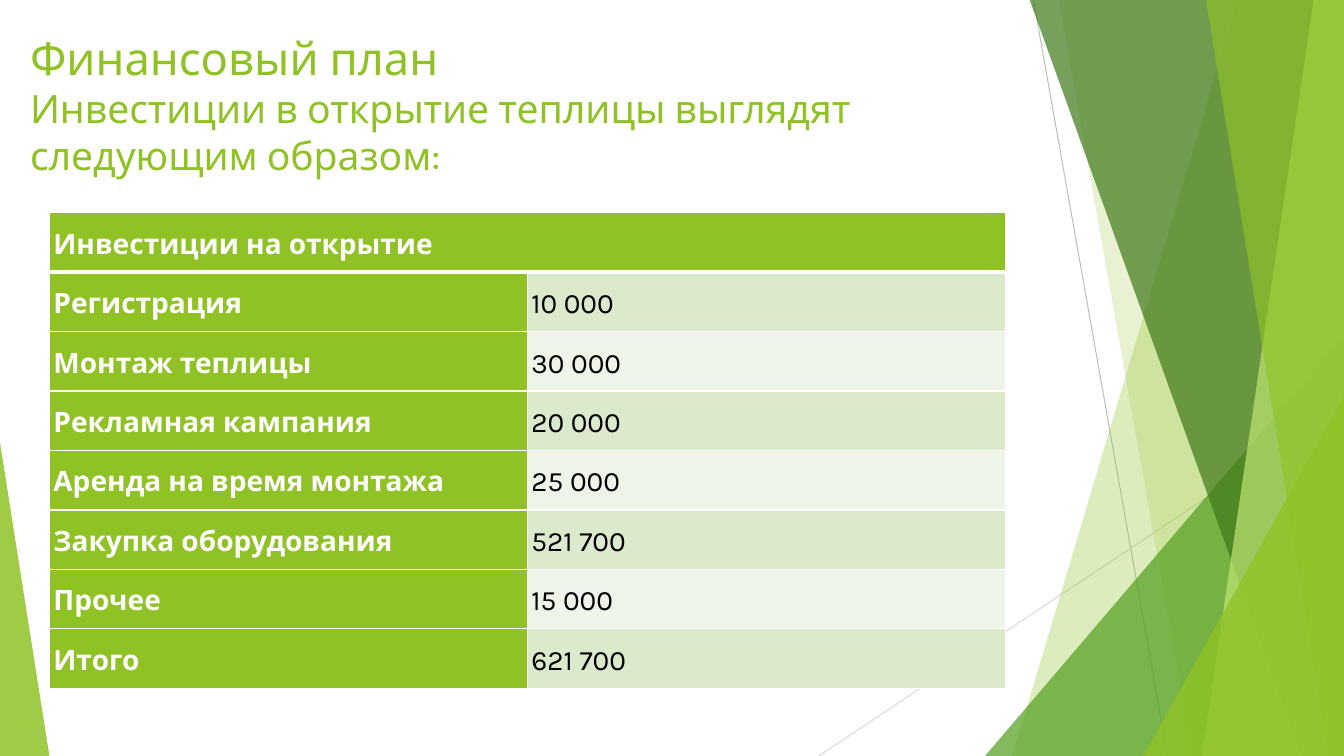
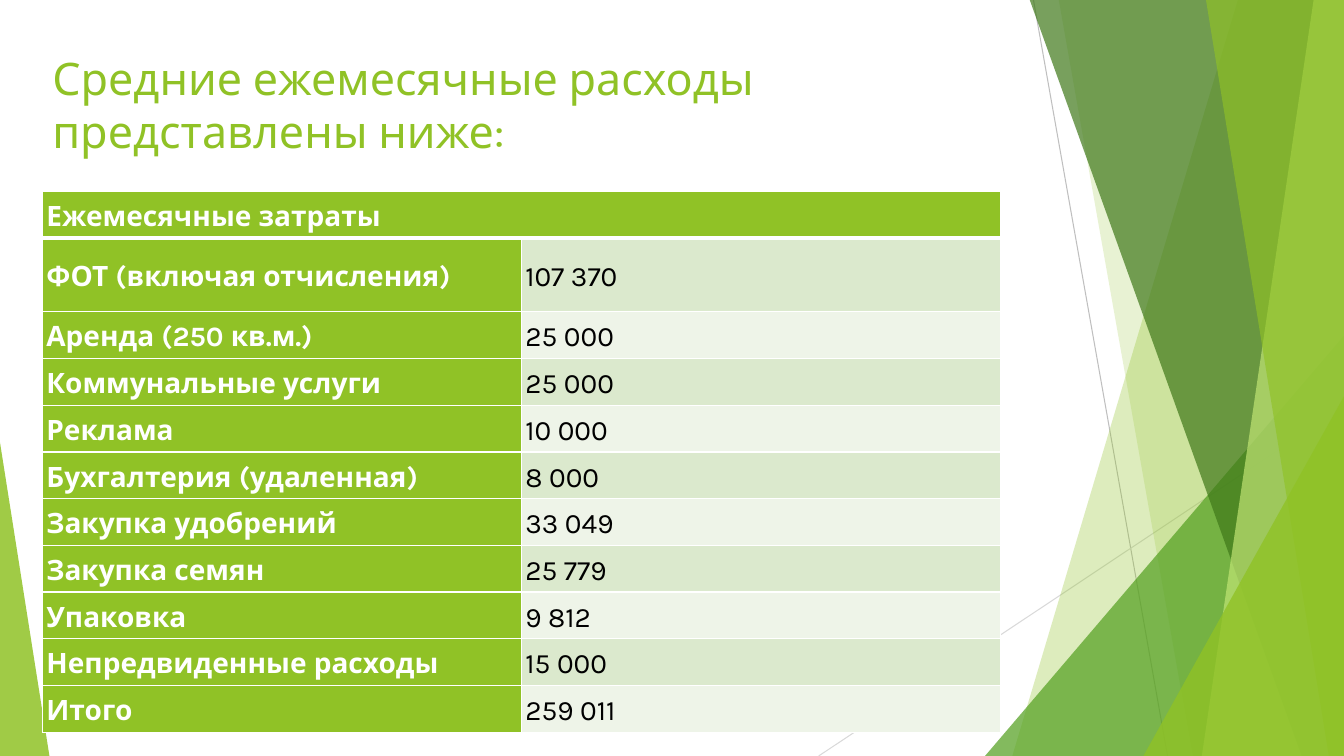
from lxml import etree
from pptx import Presentation
from pptx.dml.color import RGBColor
from pptx.enum import shapes, text
from pptx.oxml import ns
from pptx.util import Inches, Pt

FONT = "Karla"
WHITE = RGBColor(0xFF, 0xFF, 0xFF)
BLACK = RGBColor(0x00, 0x00, 0x00)
LIME = RGBColor(0x90, 0xC2, 0x26)
PALE_LIME = RGBColor(0xC0, 0xE4, 0x74)
GREEN = RGBColor(0x54, 0xA0, 0x21)
DARK_GREEN = RGBColor(0x3F, 0x78, 0x19)
ROW_TINTS = (RGBColor(0xEE, 0xF4, 0xE8), RGBColor(0xDB, 0xE9, 0xCD))
GRAY = RGBColor(0xBF, 0xBF, 0xBF)
LIGHT_GRAY = RGBColor(0xD9, 0xD9, 0xD9)

WIDTH, HEIGHT = 13.33, 7.5
BAND_TOP = -0.01

# Hairlines: start, end, colour
HAIRLINES = [
    ((10.25, 0), (11.58, HEIGHT), GRAY),
    ((WIDTH, 4.03), (8.12, HEIGHT), LIGHT_GRAY),
]
# Back to front. Bands run to the right edge: ("band", top x, bottom x, colour, opacity)
# Wedges stand on the bottom edge: ("wedge", left, top, width, apex, colour, opacity)
FACETS = [
    ("band", 12.28, 10.04, LIME, 30),
    ("band", 10.5, 11.83, LIME, 20),
    ("wedge", 9.77, 3.33, 3.56, 1, GREEN, 72),
    ("band", 10.21, 12.91, DARK_GREEN, 70),
    ("band", 13.03, 11.92, PALE_LIME, 70),
    ("band", 11.96, 13.18, LIME, 65),
    ("wedge", 11.34, 3.93, 1.99, 1, LIME, 80),
    ("wedge", 0, 4.39, 0.49, 0, LIME, 85),
]

SLIDES = [
    {
        "title": [("Финансовый план", 32.4),
                  ("Инвестиции в открытие теплицы выглядят следующим образом:", 27.9)],
        "title_box": (0.2, 0.25, 9.94, 1.86),
        "table_at": (0.49, 2.11),
        "column": 4.74,
        "row": 0.59,
        "tall_rows": {},
        "header": "Инвестиции на открытие",
        "costs": [
            ("Регистрация", 10000),
            ("Монтаж теплицы", 30000),
            ("Рекламная кампания", 20000),
            ("Аренда на время монтажа", 25000),
            ("Закупка оборудования", 521700),
            ("Прочее", 15000),
            ("Итого", 621700),
        ],
    },
    {
        "title": [("Средние ежемесячные расходы представлены ниже:", 32)],
        "title_box": (0.42, 0.45, 9.72, 1.9),
        "table_at": (0.42, 1.9),
        "column": 4.75,
        "row": 0.4,
        "tall_rows": {1: 0.73},
        "header": "Ежемесячные затраты",
        "costs": [
            ("ФОТ (включая отчисления)", 107370),
            ("Аренда (250 кв.м.)", 25000),
            ("Коммунальные услуги", 25000),
            ("Реклама", 10000),
            ("Бухгалтерия (удаленная)", 8000),
            ("Закупка удобрений", 33049),
            ("Закупка семян", 25779),
            ("Упаковка", 9812),
            ("Непредвиденные расходы", 15000),
            ("Итого", 259011),
        ],
    },
]


def inches(*lengths):
    return [Inches(length) for length in lengths]


def write(paragraph, words, size=20, color=LIME, bold=False, spacing=None, after=0):
    run = paragraph.add_run()
    run.text = words
    run.font.name = FONT
    run.font.size = Pt(size)
    run.font.bold = bold
    run.font.color.rgb = color
    paragraph.line_spacing = spacing
    paragraph.space_after = Pt(after)


def paint(facet, color, opacity):
    facet.shadow.inherit = False
    facet.line.fill.background()
    facet.fill.solid()
    facet.fill.fore_color.rgb = color
    srgb = facet.fill._xPr.find(".//" + ns.qn("a:srgbClr"))
    etree.SubElement(srgb, ns.qn("a:alpha"), val=str(opacity * 1000))


def add_hairline(slide, start, end, color):
    hairline = slide.shapes.add_connector(
        shapes.MSO_CONNECTOR.STRAIGHT, *inches(*start, *end))
    hairline.line.color.rgb = color
    hairline.line.width = Pt(0.75)
    etree.SubElement(hairline._element.spPr, ns.qn("a:effectLst"))


def add_band(slide, top_x, bottom_x, color, opacity):
    outline = slide.shapes.build_freeform(*inches(top_x, BAND_TOP))
    corners = [(WIDTH, BAND_TOP), (WIDTH, HEIGHT), (bottom_x, HEIGHT)]
    outline.add_line_segments([inches(*corner) for corner in corners], close=True)
    paint(outline.convert_to_shape(), color, opacity)


def add_wedge(slide, left, top, width, apex, color, opacity):
    wedge = slide.shapes.add_shape(
        shapes.MSO_SHAPE.ISOSCELES_TRIANGLE, *inches(left, top, width, HEIGHT - top))
    wedge.adjustments[0] = apex
    paint(wedge, color, opacity)


def add_backdrop(slide):
    for hairline in HAIRLINES:
        add_hairline(slide, *hairline)
    add_facet = {"band": add_band, "wedge": add_wedge}
    for kind, *facet in FACETS:
        add_facet[kind](slide, *facet)


def add_title(slide, lines, box):
    frame = slide.shapes.add_textbox(*inches(*box)).text_frame
    frame.word_wrap = True
    frame.vertical_anchor = text.MSO_ANCHOR.TOP
    for index, (words, size) in enumerate(lines):
        paragraph = frame.add_paragraph() if index else frame.paragraphs[0]
        write(paragraph, words, size=size)


def set_borders(cell, **widths):
    """Draw white borders; widths in points by side letter (L, R, T, B)."""
    for side in "LRTB":
        border = etree.SubElement(cell._tc.get_or_add_tcPr(), ns.qn("a:ln" + side),
                                  w=str(Pt(widths.get(side, 1))))
        fill = etree.SubElement(border, ns.qn("a:solidFill"))
        etree.SubElement(fill, ns.qn("a:srgbClr"), val=str(WHITE))


def format_cell(cell, words, fill, **style):
    cell.margin_left = cell.margin_right = Inches(0.04)
    cell.margin_top = cell.margin_bottom = Inches(0.04)
    cell.vertical_anchor = text.MSO_ANCHOR.MIDDLE
    cell.fill.solid()
    cell.fill.fore_color.rgb = fill
    write(cell.text_frame.paragraphs[0], words, spacing=1.15, after=9, **style)


def add_cost_table(slide, content):
    costs = content["costs"]
    heights = [content["tall_rows"].get(row, content["row"])
               for row in range(len(costs) + 1)]
    table = slide.shapes.add_table(
        len(heights), 2,
        *inches(*content["table_at"], 2 * content["column"], sum(heights))).table
    for column in table.columns:
        column.width = Inches(content["column"])
    for row, height in zip(table.rows, heights):
        row.height = Inches(height)

    heading = table.cell(0, 0)
    heading.merge(table.cell(0, 1))
    for cell in table.rows[0].cells:
        set_borders(cell, B=3)
    format_cell(heading, content["header"], LIME, color=WHITE, bold=True)

    for index, (label, amount) in enumerate(costs, start=1):
        label_cell, amount_cell = table.rows[index].cells
        for cell in (label_cell, amount_cell):
            set_borders(cell, T=3 if index == 1 else 1)
        format_cell(label_cell, label, LIME, color=WHITE, bold=True)
        grouped = f"{amount:,}".replace(",", " ")
        format_cell(amount_cell, grouped, ROW_TINTS[index % 2], color=BLACK)


def main():
    deck = Presentation()
    deck.slide_width, deck.slide_height = inches(WIDTH, HEIGHT)
    for content in SLIDES:
        slide = deck.slides.add_slide(deck.slide_layouts[6])
        add_backdrop(slide)
        add_title(slide, content["title"], content["title_box"])
        add_cost_table(slide, content)
    deck.save("out.pptx")


if __name__ == "__main__":
    main()
